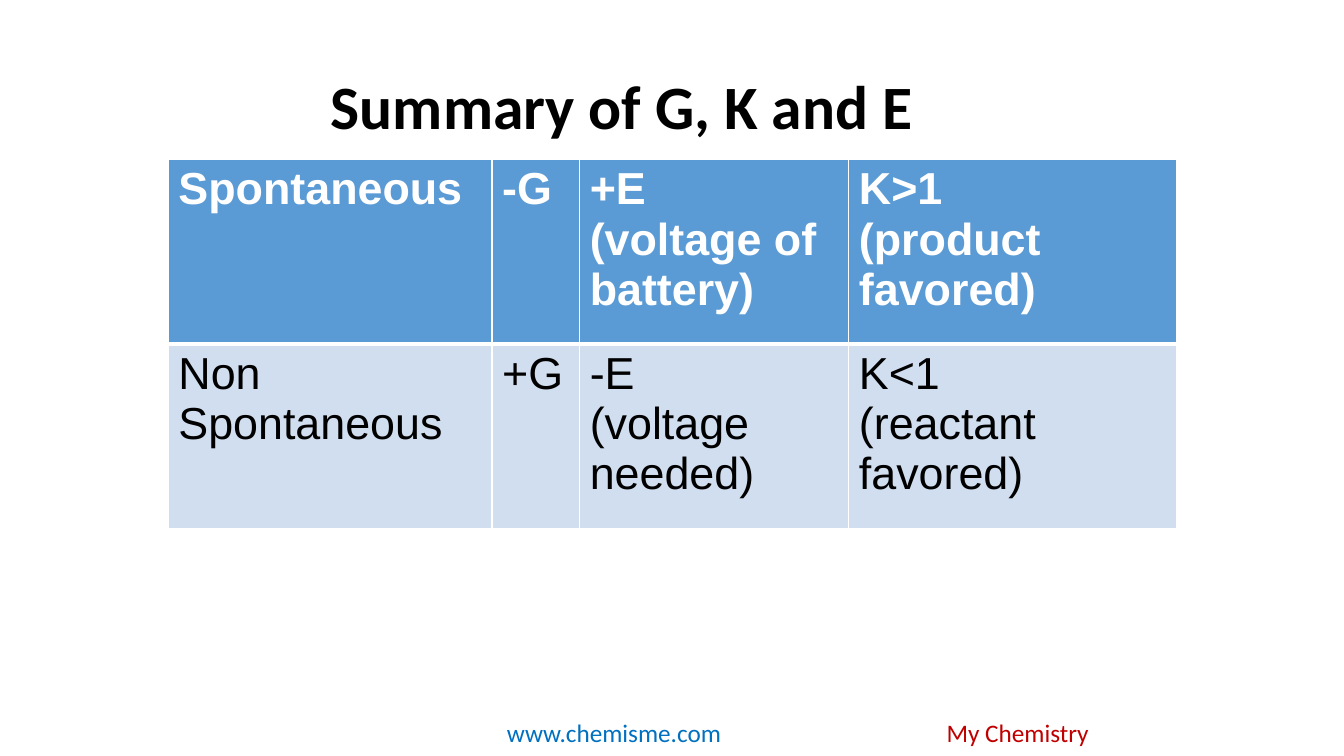
"""Build the slide that sums up the signs of G, K and E."""
from lxml.etree import SubElement
from pptx import Presentation
from pptx.dml.color import RGBColor
from pptx.enum.text import MSO_ANCHOR as Anchor, PP_ALIGN as Align
from pptx.oxml.ns import qn
from pptx.util import Inches, Pt

TITLE = "Summary of G, K and E"
SUMMARY = [
    ["Spontaneous", "-G", "+E\n(voltage of battery)", "K>1\n(product favored)"],
    ["Non\nSpontaneous", "+G", "-E\n(voltage needed)", "K<1\n(reactant favored)"],
]
COLUMN_WIDTHS = [3.21, 0.87, 2.67, 3.25]
ROW_HEIGHT = 1.83
FOOTERS = [("www.chemisme.com", 4.93, "0070C0"), ("My Chemistry", 9.29, "C00000")]
ROW_FILLS = ["5B9BD5", "D0DEEF"]
ROW_FONTS = [
    {"name": "Arial", "size": Pt(32), "bold": True, "color": "FFFFFF"},
    {"name": "Arial", "size": Pt(32), "bold": False, "color": "000000"},
]
ROW_BORDERS = [
    {"lnL": 1, "lnR": 1, "lnT": 1, "lnB": 3},
    {"lnL": 1, "lnR": 1, "lnT": 3, "lnB": 1},
]
TITLE_FONT = {"name": "Calibri", "size": Pt(44), "bold": True, "color": "000000"}


def rgb(hex_color):
    return RGBColor.from_string(hex_color)


def write(frame, text, font):
    frame.text = text
    for paragraph in frame.paragraphs:
        for run in paragraph.runs:
            for key, value in font.items():
                if key == "color":
                    run.font.color.rgb = rgb(value)
                else:
                    setattr(run.font, key, value)


def add_borders(cell, widths):
    properties = cell._tc.get_or_add_tcPr()
    for side, width in widths.items():
        line = SubElement(properties, qn(f"a:{side}"), w=str(Pt(width)))
        fill = SubElement(line, qn("a:solidFill"))
        SubElement(fill, qn("a:srgbClr"), val="FFFFFF")


def add_title(slide):
    title = slide.shapes.title
    place = {"left": 1.67, "top": 0.5, "width": 9, "height": 1.17}
    for key, value in place.items():
        setattr(title, key, Inches(value))
    write(title.text_frame, TITLE, TITLE_FONT)
    title.text_frame.vertical_anchor = Anchor.MIDDLE
    heading = title.text_frame.paragraphs[0]
    heading.alignment, heading.line_spacing = Align.CENTER, 0.9


def add_summary(slide):
    table = slide.shapes.add_table(
        len(SUMMARY), len(COLUMN_WIDTHS), Inches(1.67), Inches(1.58),
        Inches(sum(COLUMN_WIDTHS)), Inches(ROW_HEIGHT * len(SUMMARY))).table
    for column, width in zip(table.columns, COLUMN_WIDTHS):
        column.width = Inches(width)
    for row, texts, fill, font, borders in zip(
            table.rows, SUMMARY, ROW_FILLS, ROW_FONTS, ROW_BORDERS):
        row.height = Inches(ROW_HEIGHT)
        for cell, text in zip(row.cells, texts):
            add_borders(cell, borders)
            cell.fill.solid()
            cell.fill.fore_color.rgb = rgb(fill)
            write(cell.text_frame, text, font)


def add_footers(slide):
    for text, left, color in FOOTERS:
        footer = slide.shapes.add_textbox(
            Inches(left), Inches(7.07), Inches(2.41), Inches(0.4))
        footer.text_frame.word_wrap = True
        write(footer.text_frame, text,
              {"name": "Calibri", "size": Pt(18), "color": color})


def main():
    deck = Presentation()
    deck.slide_width, deck.slide_height = Inches(13.33), Inches(7.5)
    slide = deck.slides.add_slide(deck.slide_layouts[5])
    add_footers(slide)
    add_title(slide)
    add_summary(slide)
    deck.save("out.pptx")


if __name__ == "__main__":
    main()
